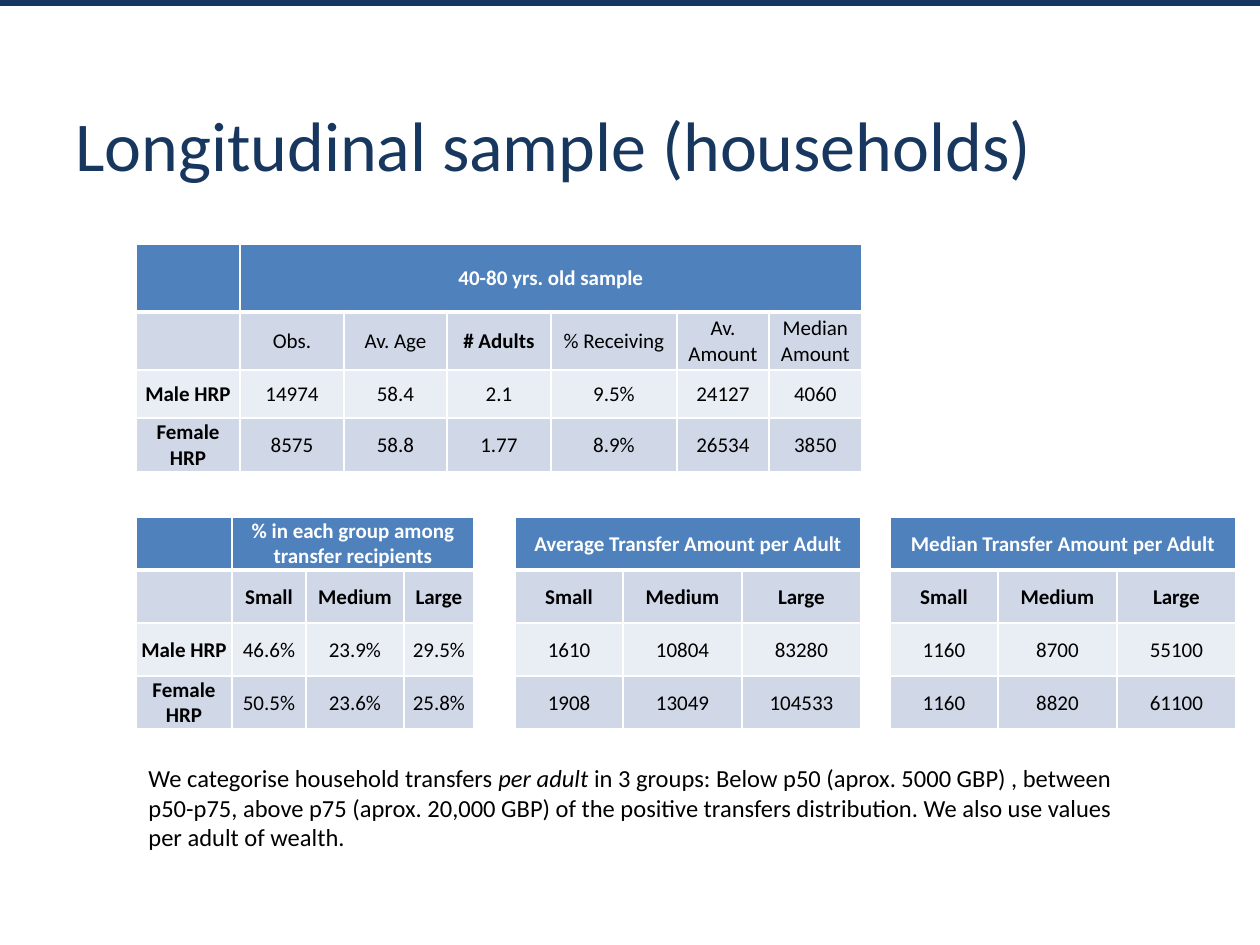
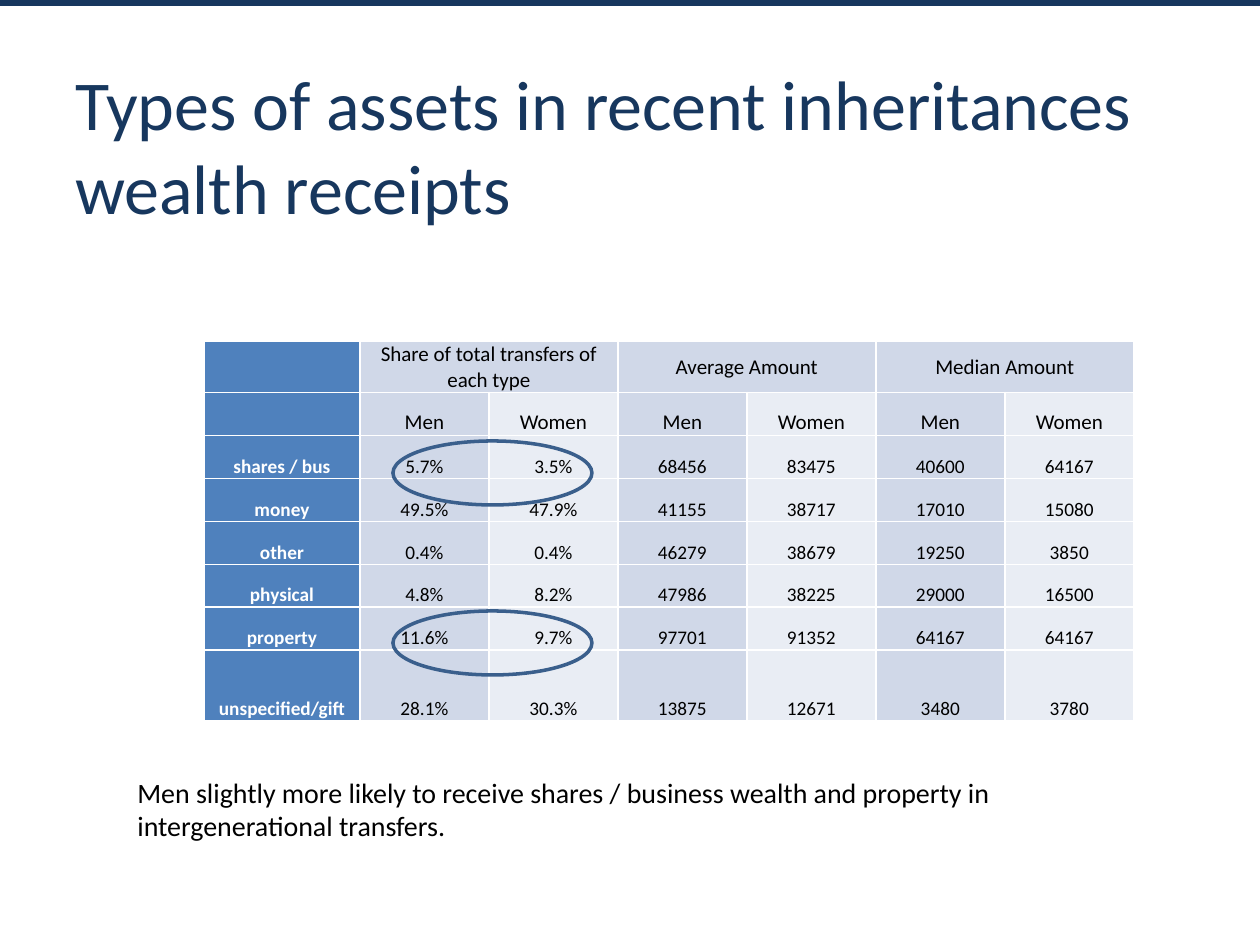
from dataclasses import dataclass

from lxml.etree import SubElement
from pptx import Presentation
from pptx.dml.color import RGBColor
from pptx.enum.shapes import MSO_SHAPE
from pptx.enum.text import MSO_ANCHOR, MSO_AUTO_SIZE, PP_ALIGN
from pptx.oxml.ns import qn
from pptx.util import Emu, Pt


@dataclass(frozen=True)
class Theme:
    font: str = "Calibri"
    navy: str = "17375E"
    header: str = "4F81BD"
    dark_band: str = "D0D8E8"
    light_band: str = "E9EDF4"
    ring: str = "3A5F8C"
    white: str = "FFFFFF"
    black: str = "000000"
    title_size: int = 40
    conclusion_size: int = 16
    note_size: int = 14
    cell_size: int = 12
    value_size: int = 11


THEME = Theme()
PAGE_WIDTH, PAGE_HEIGHT = 1260, 945
TITLE_BOX = (63, 45, 1134, 198)
GROUPS = ["Small", "Medium", "Large"]
SEXES = ["Male HRP", "Female HRP"]


def px(length):
    return Emu(round(length * 914400 / 126))


def rgb(colour):
    return RGBColor.from_string(colour)


def write_span(para, text, size=THEME.cell_size, colour=THEME.black, bold=False, italic=False):
    span = para.add_run()
    span.text = text
    font = span.font
    font.name, font.size, font.bold, font.italic = THEME.font, Pt(size), bold, italic
    font.color.rgb = rgb(colour)


def add_text_box(page, box, anchor=MSO_ANCHOR.TOP, grow=True):
    frame = page.shapes.add_textbox(*map(px, box)).text_frame
    frame.word_wrap = True
    frame.vertical_anchor = anchor
    frame.auto_size = MSO_AUTO_SIZE.SHAPE_TO_FIT_TEXT if grow else MSO_AUTO_SIZE.NONE
    return frame.paragraphs[0]


def add_page(deck, title):
    page = deck.slides.add_slide(deck.slide_layouts[6])
    band = page.shapes.add_shape(MSO_SHAPE.RECTANGLE, 0, 0, px(PAGE_WIDTH), px(6))
    band.shadow.inherit = False
    band.fill.solid()
    band.fill.fore_color.rgb = rgb(THEME.navy)
    band.line.fill.background()
    para = add_text_box(page, TITLE_BOX, anchor=MSO_ANCHOR.MIDDLE, grow=False)
    write_span(para, title, size=THEME.title_size, colour=THEME.navy)
    return page


def set_borders(cell, top, bottom):
    properties = cell._tc.get_or_add_tcPr()
    widths = {"a:lnL": 1, "a:lnR": 1, "a:lnT": top, "a:lnB": bottom}
    for position, (tag, width) in enumerate(widths.items()):
        line = SubElement(properties, qn(tag), w=str(Pt(width)))
        fill = SubElement(line, qn("a:solidFill"))
        SubElement(fill, qn("a:srgbClr"), val=THEME.white)
        properties.insert(position, line)


def add_grid(page, corner, widths, heights, rows, spans, style):
    box = (*corner, sum(widths), sum(heights))
    table = page.shapes.add_table(len(rows), len(widths), *map(px, box)).table
    table.first_row = table.horz_banding = False
    for column, width in zip(table.columns, widths):
        column.width = px(width)
    for line, height in zip(table.rows, heights):
        line.height = px(height)
    for row, texts in enumerate(rows):
        for col, text in enumerate(texts):
            look = style(row, col, text)
            cell = table.cell(row, col)
            cell.fill.solid()
            cell.fill.fore_color.rgb = rgb(look["fill"])
            cell.margin_left = cell.margin_right = cell.margin_top = px(1)
            cell.margin_bottom = 0
            cell.vertical_anchor = look.get("anchor", MSO_ANCHOR.MIDDLE)
            set_borders(cell, look.get("top", 1), look.get("bottom", 1))
            if text:
                para = cell.text_frame.paragraphs[0]
                para.alignment = PP_ALIGN.CENTER
                write_span(para, text, **look["font"])
    for first, last in spans:
        table.cell(0, first).merge(table.cell(0, last))


def household_style(row, col, text):
    if row == 0:
        return {"fill": THEME.header, "bottom": 3, "font": {"colour": THEME.white, "bold": True}}
    bold = text in [*GROUPS, *SEXES, "# Adults"]
    fill = THEME.dark_band if row % 2 else THEME.light_band
    return {"fill": fill, "top": 3 if row == 1 else 1, "font": {"bold": bold}}


def asset_style(row, col, text):
    font = {"size": THEME.cell_size if row < 2 else THEME.value_size}
    fill = THEME.dark_band if row == 0 or col % 2 else THEME.light_band
    if col == 0:
        fill = THEME.header
        font.update(colour=THEME.white, bold=True)
    anchor = MSO_ANCHOR.BOTTOM if row else MSO_ANCHOR.MIDDLE
    return {"fill": fill, "font": font, "anchor": anchor}


def add_sample_table(page, corner):
    rows = [
        ["", "40-80 yrs. old sample", "", "", "", "", ""],
        ["", "Obs.", "Av. Age", "# Adults", "% Receiving", "Av. Amount", "Median Amount"],
        [SEXES[0], "14974", "58.4", "2.1", "9.5%", "24127", "4060"],
        [SEXES[1], "8575", "58.8", "1.77", "8.9%", "26534", "3850"],
    ]
    widths = [104, 104, 103, 104, 126, 92, 93]
    add_grid(page, corner, widths, [68, 58, 48, 54], rows, [(1, 6)], household_style)


def add_group_table(page, corner, heading, widths, male, female, labelled=False):
    rows = [[heading, "", ""], GROUPS, male, female]
    if labelled:
        rows = [[label, *row] for label, row in zip(["", "", *SEXES], rows)]
    first = int(labelled)
    add_grid(page, corner, widths, [53] * 4, rows, [(first, first + 2)], household_style)


def add_asset_table(page, corner):
    rows = [
        ["", "Share of total transfers of each type", "", "Average Amount", "", "Median Amount", ""],
        ["", *["Men", "Women"] * 3],
        ["shares / bus", "5.7%", "3.5%", "68456", "83475", "40600", "64167"],
        ["money", "49.5%", "47.9%", "41155", "38717", "17010", "15080"],
        ["other", "0.4%", "0.4%", "46279", "38679", "19250", "3850"],
        ["physical", "4.8%", "8.2%", "47986", "38225", "29000", "16500"],
        ["property", "11.6%", "9.7%", "97701", "91352", "64167", "64167"],
        ["unspecified/gift", "28.1%", "30.3%", "13875", "12671", "3480", "3780"],
    ]
    spans = [(first, first + 1) for first in (1, 3, 5)]
    add_grid(page, corner, [156] + [129] * 6, [43] * 7 + [71], rows, spans, asset_style)


def add_ring(page, box):
    ring = page.shapes.add_shape(MSO_SHAPE.OVAL, *map(px, box))
    ring.shadow.inherit = False
    ring.fill.background()
    ring.line.color.rgb = rgb(THEME.ring)
    ring.line.width = Pt(2)


def build_household_page(deck):
    page = add_page(deck, "Longitudinal sample (households)")
    left, groups_top = 136, 517
    add_sample_table(page, (left, 244))
    add_group_table(
        page, (left, groups_top), "% in each group among transfer recipients", [96, 74, 98, 70],
        ["46.6%", "23.9%", "29.5%"], ["50.5%", "23.6%", "25.8%"], labelled=True)
    amount_tables = [
        (515, "Average", ["1610", "10804", "83280"], ["1908", "13049", "104533"]),
        (890, "Median", ["1160", "8700", "55100"], ["1160", "8820", "61100"]),
    ]
    for amount_left, measure, male, female in amount_tables:
        heading = f"{measure} Transfer Amount per Adult"
        add_group_table(page, (amount_left, groups_top), heading, [108, 119, 119], male, female)
    para = add_text_box(page, (left, 757, 989, 102))
    write_span(para, "We categorise household transfers ", size=THEME.note_size)
    write_span(para, "per adult ", size=THEME.note_size, italic=True)
    write_span(
        para,
        "in 3 groups: Below p50 (aprox. 5000 GBP) , between p50-p75, above p75 (aprox. 20,000 GBP) "
        "of the positive transfers distribution. We also use values per adult of wealth.",
        size=THEME.note_size)


def build_asset_page(deck):
    page = add_page(deck, "Types of assets in recent inheritances wealth receipts")
    add_asset_table(page, (204, 341))
    for ring_top in (611, 441):
        add_ring(page, (393, ring_top, 199, 64))
    para = add_text_box(page, (125, 769, 1009, 81))
    write_span(
        para,
        "Men slightly more likely to receive shares / business wealth and property in "
        "intergenerational transfers.",
        size=THEME.conclusion_size)


def main():
    deck = Presentation()
    deck.slide_width, deck.slide_height = px(PAGE_WIDTH), px(PAGE_HEIGHT)
    build_household_page(deck)
    build_asset_page(deck)
    deck.save("out.pptx")


if __name__ == "__main__":
    main()
